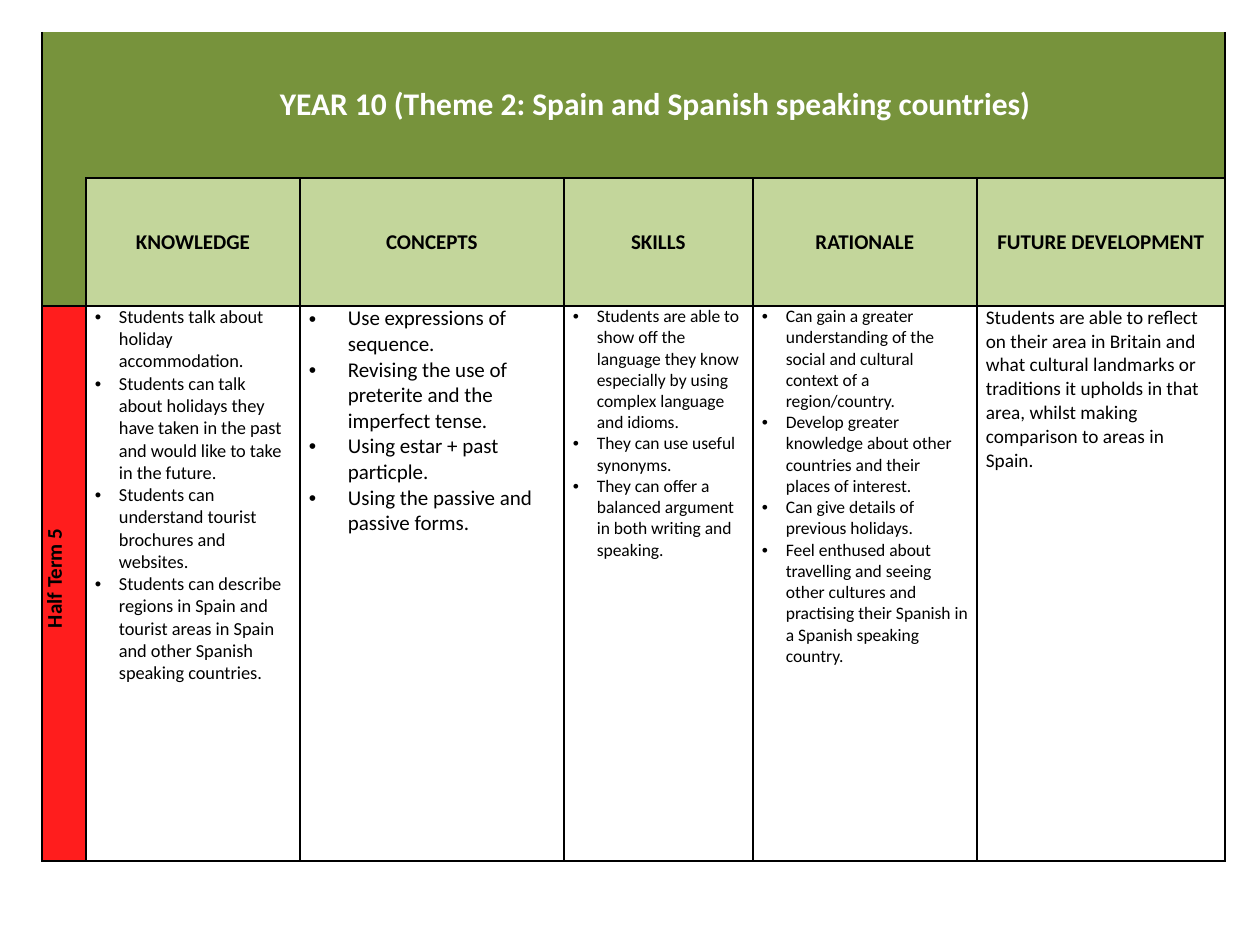
from lxml import etree
from pptx import Presentation
from pptx.dml.color import RGBColor
from pptx.enum.text import MSO_ANCHOR, PP_ALIGN
from pptx.oxml.ns import qn
from pptx.util import Pt

PX = 914400 / 126
MIDDLE, TOP = MSO_ANCHOR.MIDDLE, MSO_ANCHOR.TOP
CENTER, LEFT = PP_ALIGN.CENTER, PP_ALIGN.LEFT
FONT = "Calibri"
COLORS = {"band": "77933C", "heading": "C3D69B", "term": "FF1D1D",
          "body": "FFFFFF", "ink": "000000", "title": "FFFFFF"}

COLUMN_WIDTHS = [44, 214, 264, 189, 224, 248]
ROW_HEIGHTS = [146, 128, 555]

TITLE = "YEAR 10 (Theme 2: Spain and Spanish speaking countries)"
TERM = "Half Term 5"
# heading, text size, bullet indent, paragraphs
TOPICS = [
    ("KNOWLEDGE", 10.5, 24, [
        "Students talk about holiday accommodation.",
        "Students can talk about holidays they have taken in the past and would like to take in the future.",
        "Students can understand tourist brochures and websites.",
        "Students can describe regions in Spain and tourist areas in Spain and other Spanish speaking countries.",
    ]),
    ("CONCEPTS", 12, 39, [
        "Use expressions of sequence.",
        "Revising the use of preterite and the imperfect tense.",
        "Using estar + past particple.",
        "Using the passive and passive forms.",
    ]),
    ("SKILLS", 10, 24, [
        "Students are able to show off the language they know especially by using complex language and idioms.",
        "They can use useful synonyms.",
        "They can offer a balanced argument in both writing and speaking.",
    ]),
    ("RATIONALE", 10, 24, [
        "Can gain a greater understanding of the social and cultural context of a region/country.",
        "Develop greater knowledge about other countries and their places of interest.",
        "Can give details of previous holidays.",
        "Feel enthused about travelling and seeing other cultures and practising their Spanish in a Spanish speaking country.",
    ]),
    ("FUTURE DEVELOPMENT", 11, 0, [
        "Students are able to reflect on their area in Britain and what cultural landmarks or traditions "
        "it upholds in that area, whilst making comparison to areas in Spain.",
    ]),
]


def px(length):
    return round(length * PX)


def rgb(name):
    return RGBColor.from_string(COLORS[name])


def set_attributes(target, values):
    for key, value in values.items():
        setattr(target, key, value)


def set_borders(cell, open_sides):
    """Rule every side of the cell except the open ones; call before filling."""
    properties = cell._tc.get_or_add_tcPr()
    for side in "LRTB":
        line = etree.SubElement(properties, qn(f"a:ln{side}"), w=str(Pt(1)))
        if side in open_sides:
            etree.SubElement(line, qn("a:noFill"))
        else:
            paint = etree.SubElement(line, qn("a:solidFill"))
            etree.SubElement(paint, qn("a:srgbClr"), val=COLORS["ink"])


def set_indent(paragraph, left, bulleted):
    properties = paragraph._p.get_or_add_pPr()
    properties.set("marL", str(px(left)))
    properties.set("indent", str(px(-left if bulleted else 0)))
    if bulleted:
        etree.SubElement(properties, qn("a:buFont"), typeface="Arial")
        etree.SubElement(properties, qn("a:buChar"), char="•")


def style_cell(cell, fill, anchor):
    set_attributes(cell, {"margin_left": px(9), "margin_right": px(9),
                          "margin_top": 0, "margin_bottom": 0,
                          "vertical_anchor": anchor})
    cell.fill.solid()
    cell.fill.fore_color.rgb = rgb(fill)


def write_cell(cell, texts, size, bold=False, color="ink", align=LEFT,
               indent=0, bulleted=False):
    frame = cell.text_frame
    for index, text in enumerate(texts):
        paragraph = frame.add_paragraph() if index else frame.paragraphs[0]
        if indent:
            set_indent(paragraph, indent, bulleted)
        paragraph.alignment = align
        run = paragraph.add_run()
        run.text = text
        set_attributes(run.font, {"name": FONT, "size": Pt(size), "bold": bold})
        run.font.color.rgb = rgb(color)


def add_grid(slide):
    frame = slide.shapes.add_table(
        len(ROW_HEIGHTS), len(COLUMN_WIDTHS), px(42), px(32),
        px(sum(COLUMN_WIDTHS)), px(sum(ROW_HEIGHTS)))
    table = frame.table
    set_attributes(table, {"first_row": False, "horz_banding": False})
    for column, width in zip(table.columns, COLUMN_WIDTHS):
        column.width = px(width)
    for row, height in zip(table.rows, ROW_HEIGHTS):
        row.height = px(height)
    for row in range(len(ROW_HEIGHTS)):
        for column in range(len(COLUMN_WIDTHS)):
            open_sides = ""
            if row == 0:
                open_sides = "TRB" if column == 0 else "TL" if column == 1 else "T"
            elif row == 1 and column == 0:
                open_sides = "T"
            set_borders(table.cell(row, column), open_sides)
    table.cell(0, 0).merge(table.cell(1, 0))
    table.cell(0, 1).merge(table.cell(0, len(COLUMN_WIDTHS) - 1))
    return table


def fill_title(table):
    style_cell(table.cell(0, 0), "band", MIDDLE)
    title = table.cell(0, 1)
    style_cell(title, "band", MIDDLE)
    write_cell(title, [TITLE], 18, bold=True, color="title", align=CENTER)


def fill_term(table):
    term = table.cell(2, 0)
    style_cell(term, "term", MIDDLE)
    term._tc.get_or_add_tcPr().set("vert", "vert270")
    write_cell(term, [TERM], 12, bold=True, align=CENTER, indent=10)


def fill_topics(table):
    for column, (heading, size, indent, texts) in enumerate(TOPICS, start=1):
        heading_cell, body_cell = table.cell(1, column), table.cell(2, column)
        style_cell(heading_cell, "heading", MIDDLE)
        write_cell(heading_cell, [heading], 12, bold=True, align=CENTER)
        style_cell(body_cell, "body", TOP)
        write_cell(body_cell, texts, size, indent=indent, bulleted=indent > 0)


def main():
    deck = Presentation()
    set_attributes(deck, {"slide_width": px(1260), "slide_height": px(945)})
    slide = deck.slides.add_slide(deck.slide_layouts[6])
    table = add_grid(slide)
    fill_title(table)
    fill_term(table)
    fill_topics(table)
    deck.save("out.pptx")


if __name__ == "__main__":
    main()
